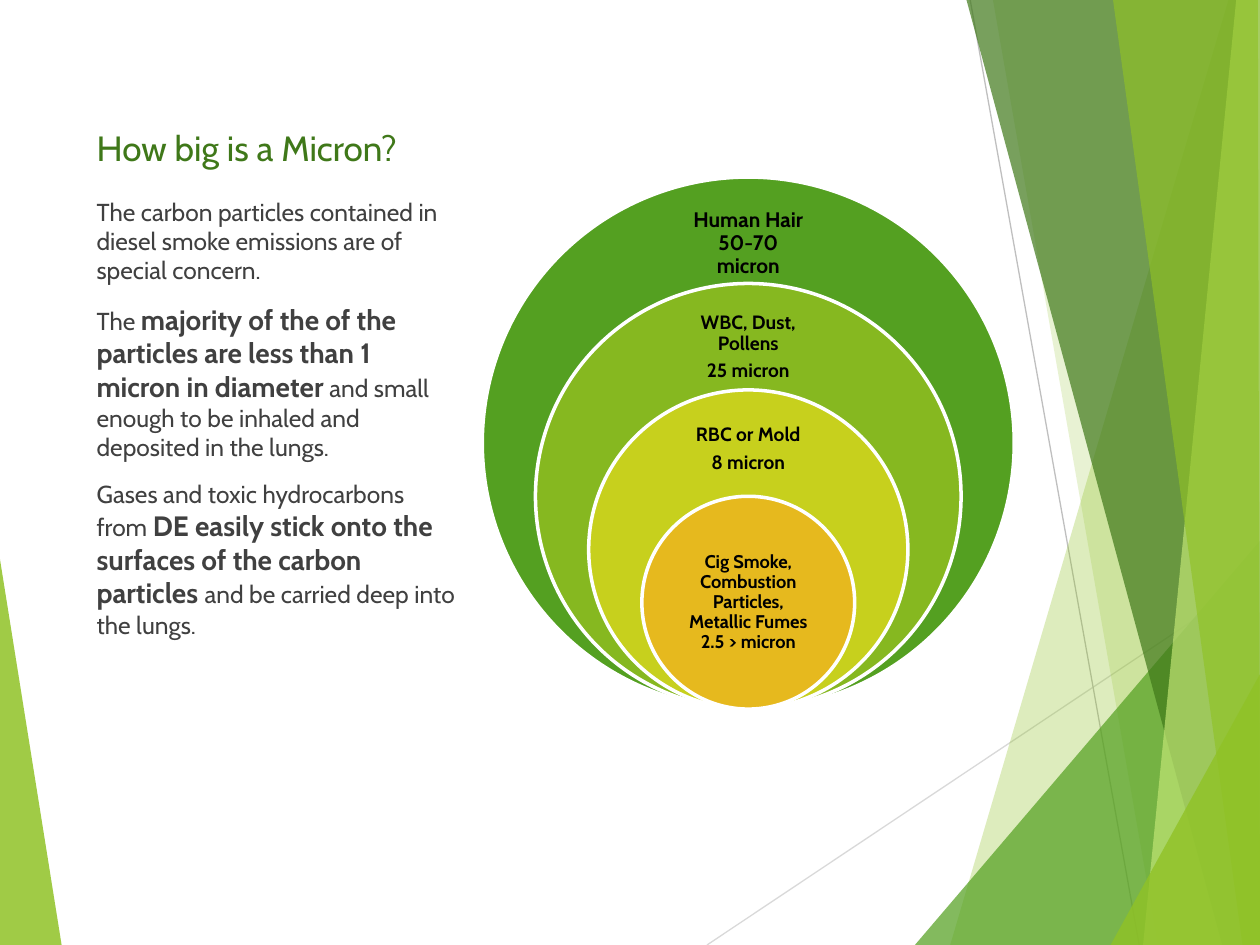
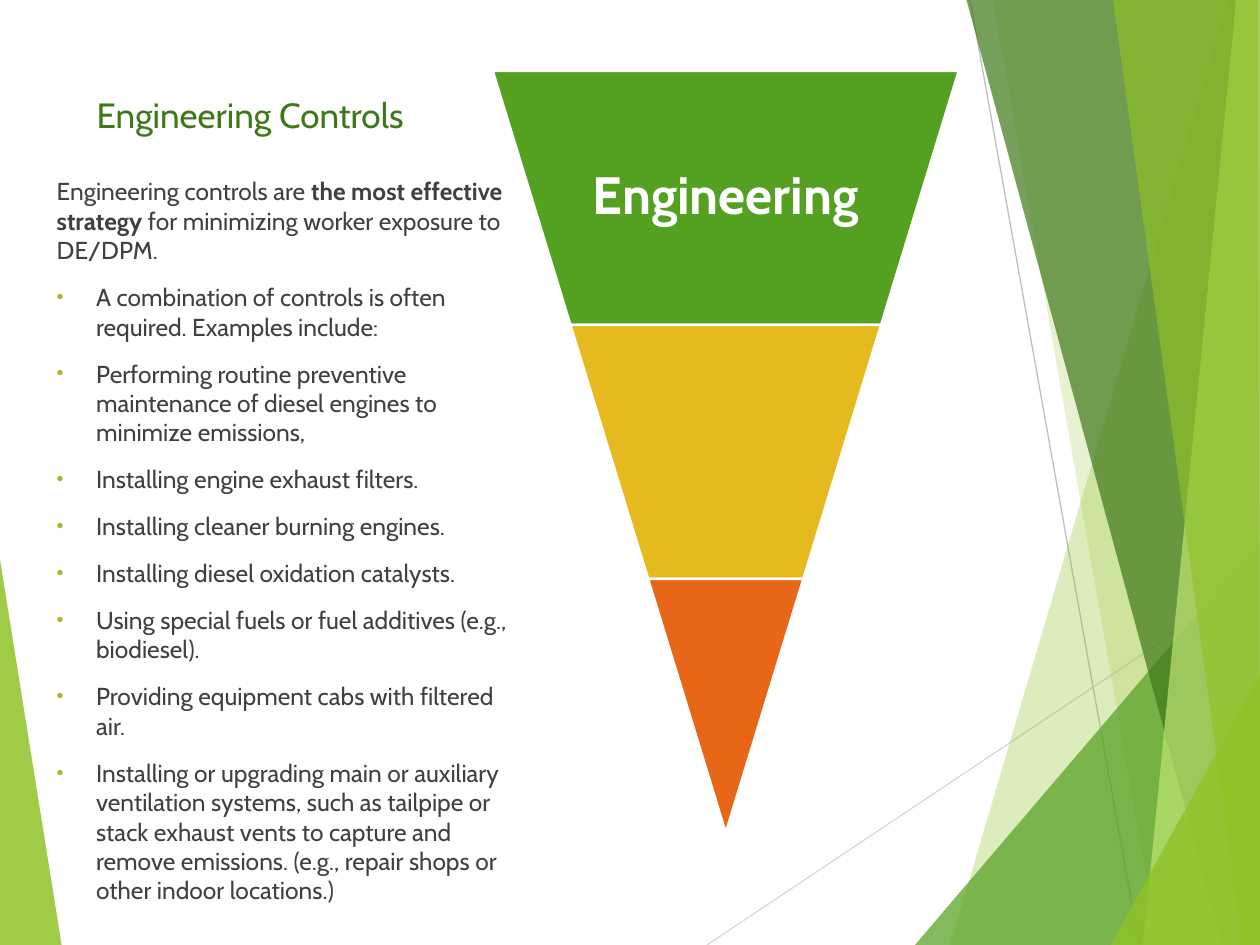
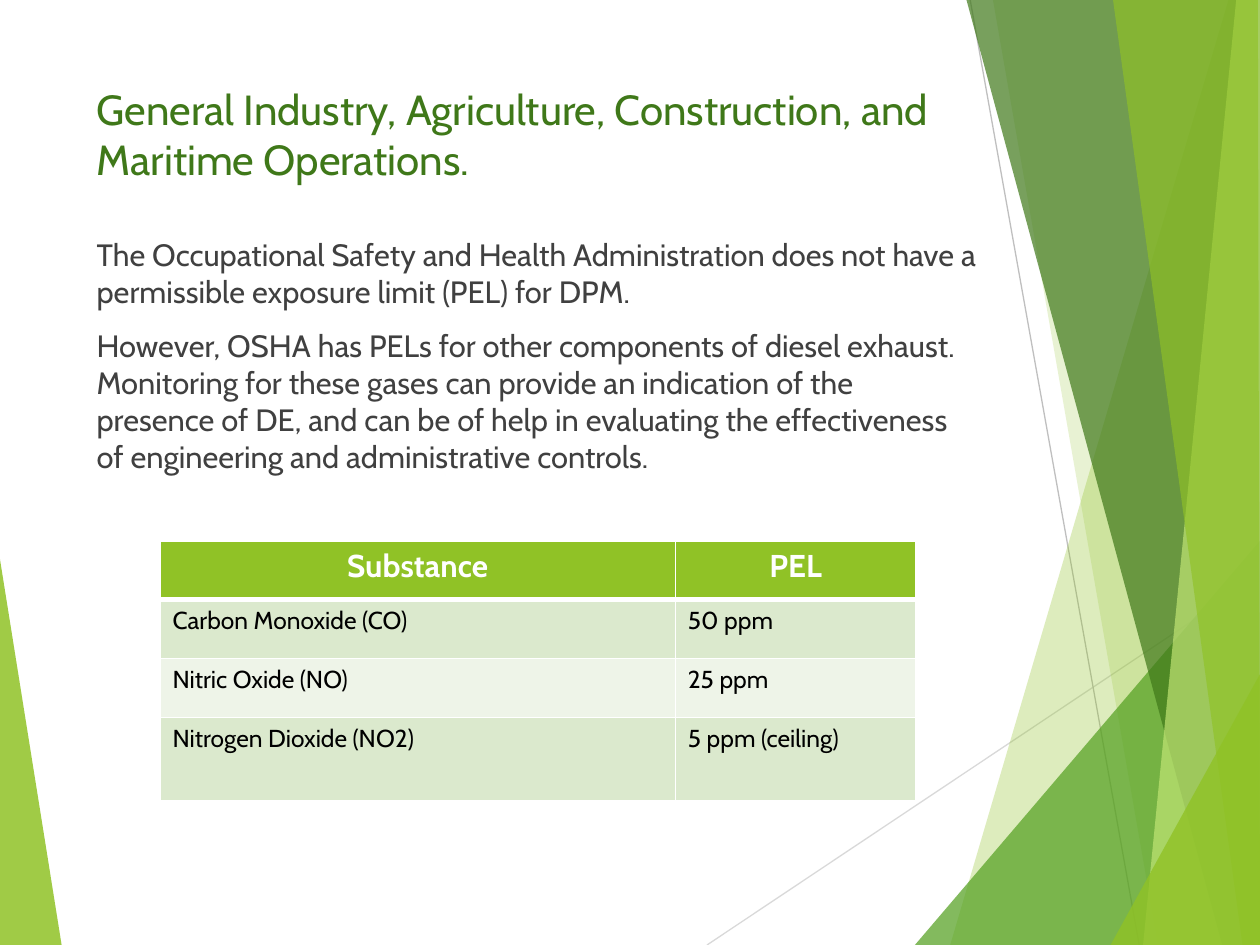
from dataclasses import dataclass
from typing import NamedTuple

from lxml import etree
from pptx import Presentation
from pptx import util as u
from pptx.dml import color as dml
from pptx.enum import shapes, text
from pptx.oxml import ns

Pt = u.Pt


@dataclass(frozen=True)
class Theme:
    font: str = "Cabin"
    title: str = "3F7819"
    body: str = "404040"
    black: str = "000000"
    white: str = "FFFFFF"
    lime: str = "90C226"
    green: str = "54A021"
    pale_lime: str = "C0E474"
    leaf: str = "86B820"
    citron: str = "C7D01D"
    gold: str = "E6B91E"
    orange: str = "E76618"
    light_line: str = "D9D9D9"
    line: str = "BFBFBF"
    row_dark: str = "DBE9CD"
    row_light: str = "EEF4E8"
    title_size: float = 20
    wide_title_size: float = 24
    body_size: float = 14
    strong_size: float = 16
    wide_body_size: float = 17.6
    hair_size: float = 12
    ring_size: float = 11
    core_size: float = 10.5
    tier_size: float = 30
    header_size: float = 18


THEME = Theme()
WIDTH, HEIGHT = 720, 540


class Box(NamedTuple):
    left: float
    top: float
    width: float
    height: float

    def lengths(self):
        return [Pt(side) for side in self]


class Facet(NamedTuple):
    points: tuple
    color: str
    opacity: int


class Ray(NamedTuple):
    start: tuple
    end: tuple
    color: str


class Ring(NamedTuple):
    color: str
    label_top: float
    label_height: float
    size: float
    lines: tuple


class Strong(NamedTuple):
    words: str


class Para(NamedTuple):
    phrases: tuple
    bulleted: bool = False


BACKDROP = (
    Facet(((-0.6, 316), (35.2, 540), (-0.6, 540)), THEME.lime, 85),
    Ray((404, 540), (720, 329), THEME.light_line),
    Ray((554.4, 0), (651, 540), THEME.line),
    Facet(((702, 0), (543, 540), (720, 540), (720, 0)), THEME.lime, 30),
    Facet(((567.4, 0), (661.7, 540), (720, 540), (720, 0)), THEME.lime, 20),
    Facet(((522.8, 540), (720, 309), (720, 540)), THEME.green, 72),
    Facet(((552.3, 0), (698.4, 540), (720, 540), (720, 0)), THEME.title, 70),
    Facet(((706.4, 0), (653.2, 540), (720, 540), (720, 0)), THEME.pale_lime, 70),
    Facet(((636, 0), (710, 540), (720, 540), (718.8, 0)), THEME.lime, 65),
    Facet(((634.6, 540), (720, 385.2), (720, 540)), THEME.lime, 80),
)

RINGS = (
    Ring(THEME.green, 116.6, 45.4, THEME.hair_size, ("Human Hair 50-70 micron",)),
    Ring(THEME.leaf, 176.4, 44, THEME.ring_size, ("WBC, Dust, Pollens", "25 micron")),
    Ring(THEME.citron, 236.2, 41, THEME.ring_size, ("RBC or Mold", "8 micron")),
    Ring(THEME.gold, 314, 60.5, THEME.core_size,
         ("Cig Smoke, Combustion Particles, Metallic Fumes 2.5 > micron",)),
)

MICRON_TEXT = (
    Para(("The carbon particles contained in diesel smoke emissions are of special concern.",)),
    Para(("The ",
          Strong("majority of the of the particles are less than 1 micron in diameter"),
          " and small enough to be inhaled and deposited in the lungs.")),
    Para(("Gases and toxic hydrocarbons from ",
          Strong("DE easily stick onto the surfaces of the carbon particles "),
          "and be carried deep into the lungs.")),
)

CONTROLS = (
    "A combination of controls is often required. Examples include:",
    "Performing routine preventive maintenance of diesel engines to minimize emissions,",
    "Installing engine exhaust filters.",
    "Installing cleaner burning engines.",
    "Installing diesel oxidation catalysts.",
    "Using special fuels or fuel additives (e.g., biodiesel).",
    "Providing equipment cabs with filtered air.",
    "Installing or upgrading main or auxiliary ventilation systems, such as tailpipe or "
    "stack exhaust vents to capture and remove emissions. (e.g., repair shops or other "
    "indoor locations.)",
)
CONTROLS_TEXT = (
    Para(("Engineering controls are ", Strong("the most effective strategy"),
          " for minimizing worker exposure to DE/DPM.")),
    *(Para((control,), bulleted=True) for control in CONTROLS),
)

LIMITS_TEXT = (
    Para(("The Occupational Safety and Health Administration does not have a permissible "
          "exposure limit (PEL) for DPM.",)),
    Para(("However, OSHA has PELs for other components of diesel exhaust. Monitoring for "
          "these gases can provide an indication of the presence of DE, and can be of help in "
          "evaluating the effectiveness of engineering and administrative controls.",)),
)
LIMITS = (
    ("Substance", "PEL"),
    ("Carbon Monoxide (CO)", "50 ppm"),
    ("Nitric Oxide (NO)", "25 ppm"),
    ("Nitrogen Dioxide (NO2)", "5 ppm (ceiling)"),
)


def rgb(value: str) -> dml.RGBColor:
    return dml.RGBColor.from_string(value)


def add_xml(parent, tag: str, **attributes):
    return etree.SubElement(parent, ns.qn(tag), **attributes)


def style(font, size: float, color: str, bold: bool = False) -> None:
    font.name = THEME.font
    font.size = Pt(size)
    font.bold = bold
    font.color.rgb = rgb(color)


def paint(shape, color: str, line_width: float = 0) -> None:
    shape.shadow.inherit = False
    shape.fill.solid()
    shape.fill.fore_color.rgb = rgb(color)
    if line_width:
        shape.line.color.rgb = rgb(THEME.white)
        shape.line.width = Pt(line_width)
    else:
        shape.line.fill.background()


def draw_facet(slide, facet: Facet):
    start, *rest = [(Pt(x), Pt(y)) for x, y in facet.points]
    builder = slide.shapes.build_freeform(*start)
    builder.add_line_segments(rest, close=True)
    shape = builder.convert_to_shape()
    paint(shape, facet.color)
    tint = shape.element.spPr.find(ns.qn("a:solidFill")).find(ns.qn("a:srgbClr"))
    add_xml(tint, "a:alpha", val=str(facet.opacity * 1000))
    return shape


def draw_ray(slide, ray: Ray):
    ends = [Pt(value) for value in (*ray.start, *ray.end)]
    connector = slide.shapes.add_connector(shapes.MSO_CONNECTOR.STRAIGHT, *ends)
    connector.line.color.rgb = rgb(ray.color)
    connector.line.width = Pt(0.75)
    add_xml(connector.element.spPr, "a:effectLst")
    return connector


def move_backdrop_to_master(master, slide) -> None:
    for number, item in enumerate(BACKDROP, start=100):
        shape = draw_ray(slide, item) if isinstance(item, Ray) else draw_facet(slide, item)
        shape.element.xpath(".//p:cNvPr")[0].set("id", str(number))
        master.shapes.element.append(shape.element)


def place(placeholder, box: Box, anchor) -> None:
    placeholder.left, placeholder.top, placeholder.width, placeholder.height = box.lengths()
    frame = placeholder.text_frame
    frame.word_wrap = True
    frame.auto_size = text.MSO_AUTO_SIZE.NONE
    frame.vertical_anchor = anchor


def set_title(slide, words: str, box: Box, size: float = THEME.title_size) -> None:
    place(slide.shapes.title, box, text.MSO_ANCHOR.BOTTOM)
    paragraph = slide.shapes.title.text_frame.paragraphs[0]
    paragraph.text = words
    paragraph.alignment = text.PP_ALIGN.LEFT
    style(paragraph.font, size, THEME.title)


def set_bullet(paragraph, bulleted: bool) -> None:
    properties = paragraph._p.get_or_add_pPr()
    indent = Pt(22.5) if bulleted else 0
    properties.set("marL", str(indent))
    properties.set("indent", str(-indent))
    if bulleted:
        add_xml(add_xml(properties, "a:buClr"), "a:srgbClr", val=THEME.lime)
        add_xml(properties, "a:buSzPct", val="80000")
        add_xml(properties, "a:buFont", typeface="Arial")
        add_xml(properties, "a:buChar", char="•")
    else:
        add_xml(properties, "a:buNone")


def set_body(slide, paras: tuple, box: Box, size: float = THEME.body_size,
             strong_size: float = THEME.body_size) -> None:
    body = slide.placeholders[1]
    place(body, box, text.MSO_ANCHOR.TOP)
    frame = body.text_frame
    for index, para in enumerate(paras):
        paragraph = frame.add_paragraph() if index else frame.paragraphs[0]
        paragraph.space_before = Pt(10 if index else 0)
        set_bullet(paragraph, para.bulleted)
        style(paragraph.font, size, THEME.body)
        for phrase in para.phrases:
            run = paragraph.add_run()
            if isinstance(phrase, Strong):
                run.text = phrase.words
                run.font.bold = True
                run.font.size = Pt(strong_size)
            else:
                run.text = phrase


def add_label(slide, lines: tuple, box: Box, size: float, color: str, inset: float) -> None:
    frame = slide.shapes.add_textbox(*box.lengths()).text_frame
    frame.word_wrap = True
    frame.vertical_anchor = text.MSO_ANCHOR.MIDDLE
    frame.margin_left = frame.margin_right = Pt(inset)
    frame.margin_top = frame.margin_bottom = Pt(inset)
    for index, line in enumerate(lines):
        paragraph = frame.add_paragraph() if index else frame.paragraphs[0]
        paragraph.text = line
        paragraph.alignment = text.PP_ALIGN.CENTER
        paragraph.line_spacing = 0.9
        paragraph.space_after = Pt(round(size * 0.35, 1))
        style(paragraph.font, size, color, bold=True)


def draw_rings(slide) -> None:
    center, bottom, outer = 427.6, 405.2, 304
    for index, ring in enumerate(RINGS):
        diameter = outer * (1 - index / 5)
        box = Box(center - diameter / 2, bottom - diameter, diameter, diameter)
        circle = slide.shapes.add_shape(shapes.MSO_SHAPE.OVAL, *box.lengths())
        paint(circle, ring.color, 2)
        label = Box(center - 42.6, ring.label_top, 85.2, ring.label_height)
        add_label(slide, ring.lines, label, ring.size, THEME.black, 6.4)


def draw_tiers(slide) -> None:
    center, top, width, height = 414.7, 40.4, 266.4, 145.2
    colors = (THEME.green, THEME.gold, THEME.orange)
    step = width / len(colors)
    for index, color in enumerate(colors):
        tier_width = width - index * step
        box = Box(center - tier_width / 2, top + index * height, tier_width, height)
        tier = slide.shapes.add_shape(shapes.MSO_SHAPE.TRAPEZOID, *box.lengths())
        tier.rotation = 180
        tier.adjustments[0] = step / 2 / min(tier_width, height)
        paint(tier, color, 1.5)
    label = Box(center - 86.7, top, 173.4, height)
    add_label(slide, ("Engineering",), label, THEME.tier_size, THEME.white, 3)


def set_borders(cell, widths: dict) -> None:
    properties = cell._tc.get_or_add_tcPr()
    for side, width in widths.items():
        edge = add_xml(properties, f"a:ln{side}", w=str(Pt(width)))
        add_xml(add_xml(edge, "a:solidFill"), "a:srgbClr", val=THEME.white)


def draw_limits(slide) -> None:
    box = Box(91.4, 309, 432, 148.6)
    table = slide.shapes.add_table(len(LIMITS), len(LIMITS[0]), *box.lengths()).table
    for column, width in zip(table.columns, (294.5, 137.5)):
        column.width = Pt(width)
    for row, height in zip(table.rows, (33.7, 33.7, 33.7, 47.5)):
        row.height = Pt(height)
    fills = (THEME.lime, THEME.row_dark, THEME.row_light, THEME.row_dark)
    for row_index, (values, fill) in enumerate(zip(LIMITS, fills)):
        header = row_index == 0
        for column_index, value in enumerate(values):
            cell = table.cell(row_index, column_index)
            set_borders(cell, {"L": 1, "R": 1, "T": 3 if row_index == 1 else 1,
                               "B": 3 if header else 1})
            cell.fill.solid()
            cell.fill.fore_color.rgb = rgb(fill)
            paragraph = cell.text_frame.paragraphs[0]
            paragraph.text = value
            if header:
                paragraph.alignment = text.PP_ALIGN.CENTER
                style(paragraph.font, THEME.header_size, THEME.white, bold=True)
            else:
                style(paragraph.font, THEME.body_size, THEME.black)


def main() -> None:
    deck = Presentation()
    deck.slide_width, deck.slide_height = Pt(WIDTH), Pt(HEIGHT)
    layout = deck.slide_layouts[1]
    micron, controls, limits = [deck.slides.add_slide(layout) for _ in range(3)]
    move_backdrop_to_master(deck.slide_master, micron)

    set_title(micron, "How big is a Micron?", Box(48, 28, 219.6, 72))
    set_body(micron, MICRON_TEXT, Box(48, 108.7, 219.6, 367.2),
             strong_size=THEME.strong_size)
    draw_rings(micron)

    set_title(controls, "Engineering Controls", Box(48, 40.3, 219.6, 41))
    set_body(controls, CONTROLS_TEXT, Box(25.2, 97.2, 283.7, 412.6))
    draw_tiers(controls)

    set_title(limits, "General Industry, Agriculture, Construction, and Maritime Operations.",
              Box(48, 20.9, 491.8, 87.8), THEME.wide_title_size)
    set_body(limits, LIMITS_TEXT, Box(48, 131, 518.4, 154), THEME.wide_body_size)
    draw_limits(limits)

    deck.save("out.pptx")


if __name__ == "__main__":
    main()
